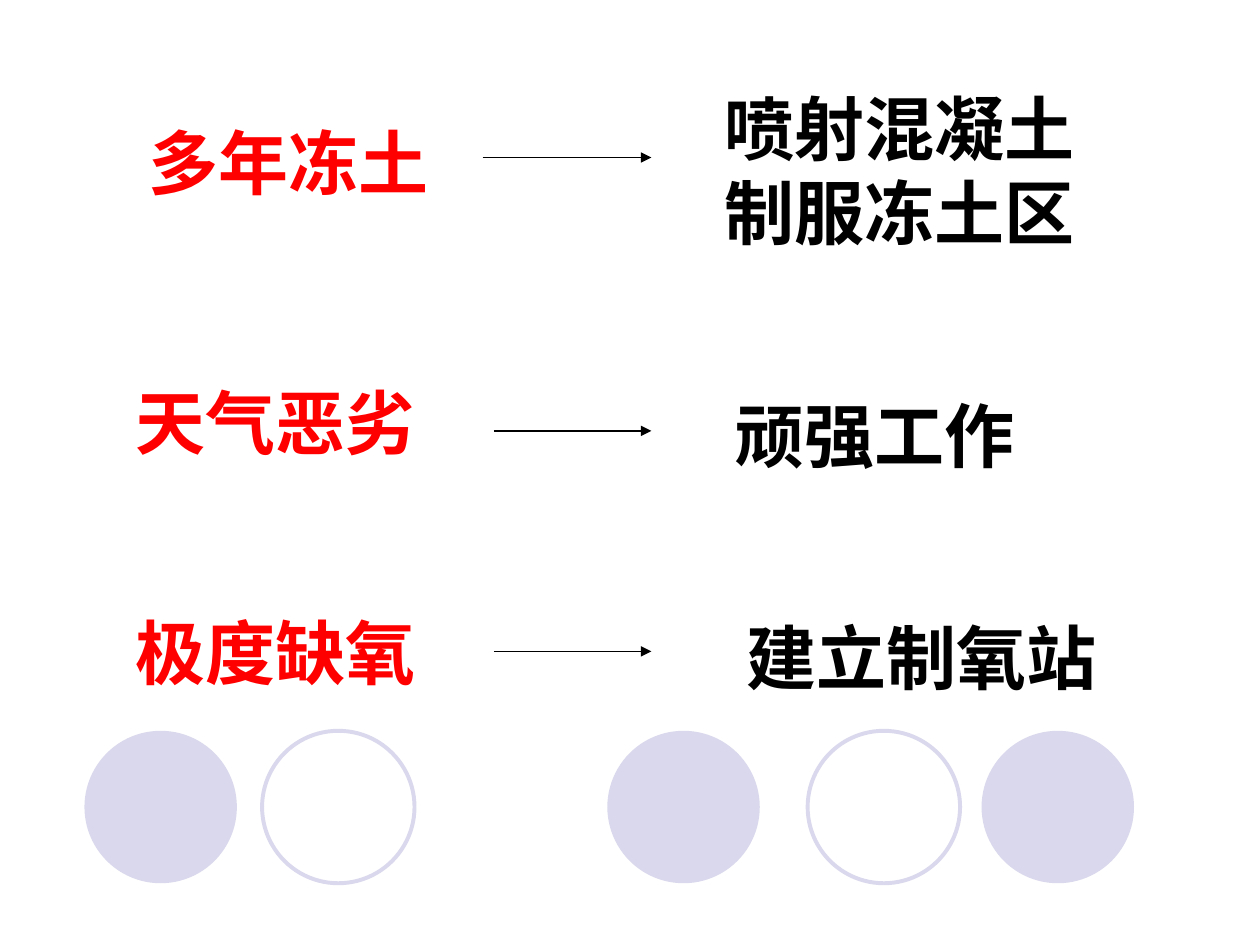
import pptx
import pptx.util
import pptx.dml.color
import pptx.enum.shapes
import pptx.enum.text
import pptx.oxml.ns
import lxml.etree

RED = pptx.dml.color.RGBColor(0xFF, 0x00, 0x00)
BLACK = pptx.dml.color.RGBColor(0x00, 0x00, 0x00)
LILAC = pptx.dml.color.RGBColor(0xD9, 0xD8, 0xEC)

WIDTH, HEIGHT = pptx.util.Inches(10), pptx.util.Inches(7.5)
COL, ROW = WIDTH // 1000, HEIGHT // 750

FONT = {"name": "Arial", "size": pptx.util.Pt(40), "bold": True}
FRAME = {
    "word_wrap": False,
    "auto_size": pptx.enum.text.MSO_AUTO_SIZE.SHAPE_TO_FIT_TEXT,
    "vertical_anchor": pptx.enum.text.MSO_ANCHOR.TOP,
}
CIRCLES = [(415, True), (712, True), (0, True), (574, False), (141, False)]
ROWS = [
    {"box": (108, 63, 756, 143), "problem": ("多年冻土", 0, 27),
     "arrow": (275, 409, 62), "answer": (["喷射混凝土", "制服冻土区"], 457, 0)},
    {"box": (98, 296, 718, 88), "problem": ("天气恶劣", 0, 0),
     "arrow": (294, 419, 46), "answer": (["顽强工作"], 475, 11)},
    {"box": (98, 479, 784, 81), "problem": ("极度缺氧", 0, 0),
     "arrow": (294, 419, 38), "answer": (["建立制氧站"], 485, 4)},
]


def set_all(obj, values):
    """Set each attribute of an object from a dict."""
    for name, value in values.items():
        setattr(obj, name, value)


def add_label(s, left, top, lines, color):
    """Add bold lines of text sized to their characters."""
    width = 19 + 56 * max(map(len, lines))
    height = 10 + 67 * len(lines)
    sp = s.shapes.add_textbox(left * COL, top * ROW, width * COL, height * ROW)
    tf = sp.text_frame
    set_all(tf, FRAME)
    for i, line in enumerate(lines):
        p = tf.add_paragraph() if i else tf.paragraphs[0]
        r = p.add_run()
        r.text = line
        set_all(r.font, FONT)
        r.font.color.rgb = color


def add_arrow(s, start, end, y):
    """Add a thin horizontal arrow with a triangle head."""
    cx = s.shapes.add_connector(
        pptx.enum.shapes.MSO_CONNECTOR.STRAIGHT,
        start * COL, y * ROW, end * COL, y * ROW)
    cx.line.color.rgb = BLACK
    cx.line.width = pptx.util.Pt(0.75)
    qn = pptx.oxml.ns.qn
    lxml.etree.SubElement(cx.line._get_or_add_ln(), qn("a:tailEnd"), type="triangle")
    lxml.etree.SubElement(cx._element.spPr, qn("a:effectLst"))


def add_row(s, box, problem, arrow, answer):
    """Place a problem, an arrow and its answer within a box."""
    left, top, _, _ = box
    text, x, y = problem
    add_label(s, left + x, top + y, [text], RED)
    start, end, y = arrow
    add_arrow(s, left + start, left + end, top + y)
    lines, x, y = answer
    add_label(s, left + x, top + y, lines, BLACK)


def add_circles(s, box):
    """Place the band of filled and outlined circles, as tall as the box."""
    left, top, _, size = box
    for x, filled in CIRCLES:
        sp = s.shapes.add_shape(
            pptx.enum.shapes.MSO_SHAPE.OVAL,
            (left + x) * COL, top * ROW, size * COL, size * ROW)
        sp.shadow.inherit = False
        if filled:
            sp.fill.solid()
            sp.fill.fore_color.rgb = LILAC
            sp.line.fill.background()
        else:
            sp.fill.background()
            sp.line.color.rgb = LILAC
            sp.line.width = pptx.util.Pt(2.25)


def main():
    """Build the slide and save it."""
    prs = pptx.Presentation()
    set_all(prs, {"slide_width": WIDTH, "slide_height": HEIGHT})
    s = prs.slides.add_slide(prs.slide_layouts[6])
    add_circles(s, (67, 580, 833, 121))
    for row in ROWS:
        add_row(s, **row)
    prs.save("out.pptx")


if __name__ == "__main__":
    main()
